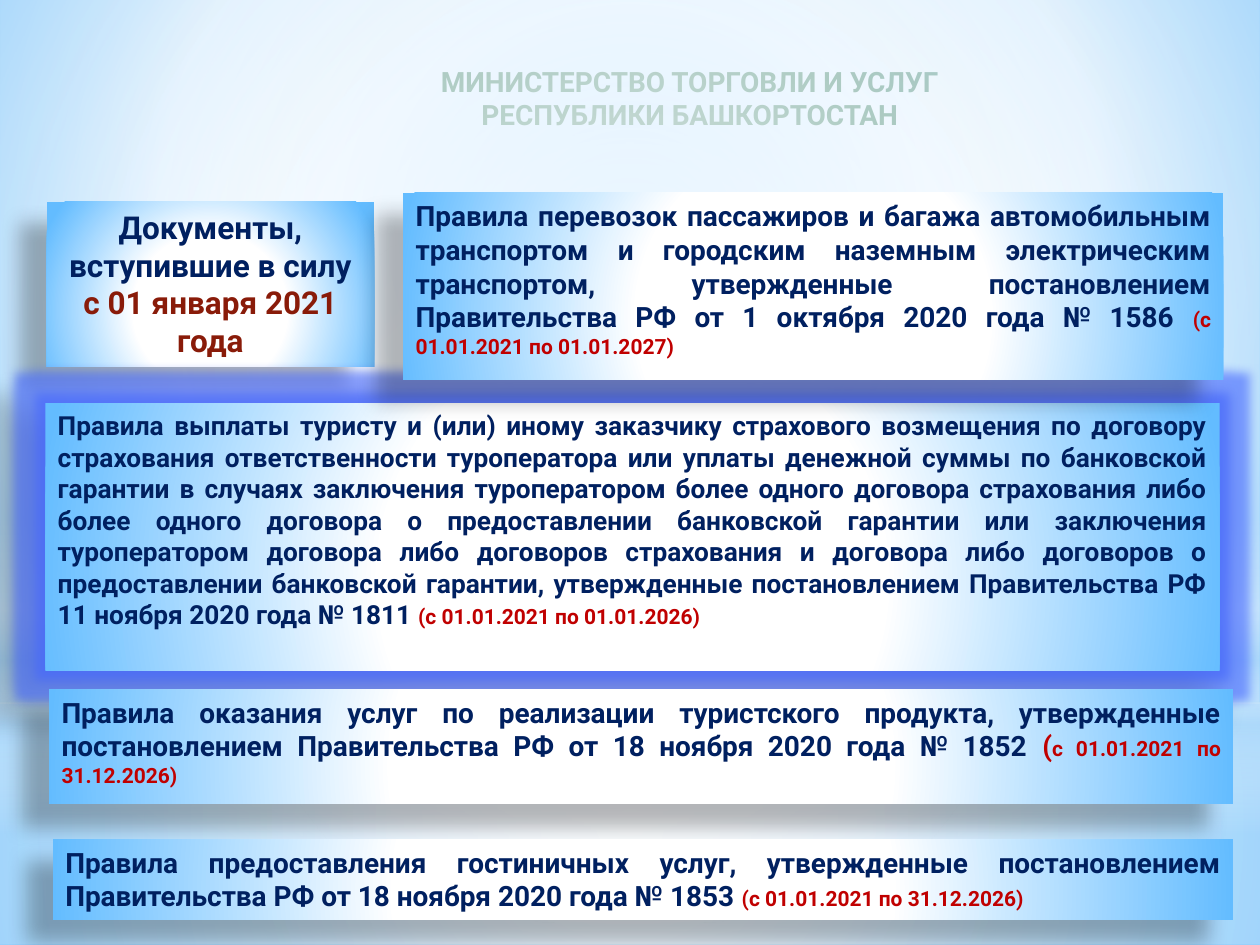
from dataclasses import dataclass
from typing import NamedTuple

from pptx import Presentation
from pptx import util as u
from pptx.dml.color import RGBColor
from pptx.enum import shapes, text
from pptx.oxml import parse_xml

NS = 'xmlns:a="http://schemas.openxmlformats.org/drawingml/2006/main"'


@dataclass(frozen=True)
class Theme:
    face: str = "Roboto"
    navy: str = "002060"
    red: str = "C00000"
    brown: str = "891B09"
    green: str = "23735D"
    glow: str = "4466FF"
    white: str = "FFFFFF"
    pale: str = "B4DCFA"
    sky: str = "63BCFF"
    large: int = 18
    head: int = 16
    dense: int = 15
    small: int = 12


T = Theme()


class Box(NamedTuple):
    left: float
    top: float
    width: float
    height: float


class Run(NamedTuple):
    words: str
    size: int
    color: str


class Grad(NamedTuple):
    """Stops are (position, colour, opacity); focus holds left, top, right, bottom insets."""
    stops: tuple
    focus: tuple = (50, 50, 50, 50)
    angle: int | None = None


class Panel(NamedTuple):
    box: Box
    grad: Grad
    kind: shapes.MSO_SHAPE = shapes.MSO_SHAPE.RECTANGLE


class Card(NamedTuple):
    box: Box
    runs: tuple
    align: text.PP_ALIGN = text.PP_ALIGN.JUSTIFY
    glow: bool = False


BACK = Grad(((0, "9ED5FF", 100), (60, T.white, 100), (100, "5BB9FF", 100)),
            (20, 10, 20, 60))
FACE = Grad(((0, T.white, 100), (42, T.white, 100), (100, T.sky, 100)),
            (24, 44, 24, 12))

PANELS = (
    Panel(Box(0, 5.58, 10, 1.92),
          Grad(((0, T.white, 91), (37, T.white, 76), (100, T.pale, 79)))),
    Panel(Box(0, 0, 10, 5.58),
          Grad(((0, T.white, 89), (48, T.white, 62), (100, T.pale, 79)))),
    Panel(Box(0, 4.12, 10, 2.5),
          Grad(((0, T.white, 0), (29, T.white, 30), (45, T.pale, 40),
                (55, T.white, 26), (65, T.pale, 60), (100, T.white, 0)), angle=90)),
    Panel(Box(0, 1.75, 10, 5.58),
          Grad(((0, T.white, 100), (56, T.white, 0))), shapes.MSO_SHAPE.OVAL),
)

CARDS = (
    Card(Box(0.37, 1.6, 2.6, 1.31),
         (Run("Документы, вступившие в силу ", T.large, T.navy),
          Run("с 01 января 2021 года", T.large, T.brown)), text.PP_ALIGN.CENTER),
    Card(Box(0.36, 3.2, 9.32, 2.12),
         (Run("Правила выплаты туристу и (или) иному заказчику страхового возмещения "
              "по договору страхования ответственности туроператора или уплаты "
              "денежной суммы по банковской гарантии в случаях заключения "
              "туроператором более одного договора страхования либо более одного "
              "договора о предоставлении банковской гарантии или заключения "
              "туроператором договора либо договоров страхования и договора либо "
              "договоров о предоставлении банковской гарантии, утвержденные "
              "постановлением Правительства РФ 11 ноября 2020 года № 1811 ",
              T.dense, T.navy),
          Run("(с 01.01.2021 по 01.01.2026)", T.small, T.red)), glow=True),
    Card(Box(0.39, 5.47, 9.4, 0.91),
         (Run("Правила оказания услуг по реализации туристского продукта, "
              "утвержденные постановлением Правительства РФ от 18 ноября 2020 года "
              "№ 1852 ", T.head, T.navy),
          Run("(", T.head, T.red),
          Run("с 01.01.2021 по 31.12.2026)", T.small, T.red))),
    Card(Box(0.42, 6.66, 9.37, 0.64),
         (Run("Правила предоставления гостиничных услуг, утвержденные "
              "постановлением Правительства РФ от 18 ноября 2020 года № 1853 ",
              T.head, T.navy),
          Run("(с 01.01.2021 по 31.12.2026)", T.small, T.red))),
    Card(Box(3.2, 1.53, 6.51, 1.48),
         (Run("Правила перевозок пассажиров и багажа автомобильным транспортом и "
              "городским наземным электрическим транспортом, утвержденные "
              "постановлением Правительства РФ от 1 октября 2020 года № 1586 ",
              T.head, T.navy),
          Run("(с 01.01.2021 по 01.01.2027)", T.small, T.red))),
)

TITLE = ("МИНИСТЕРСТВО ТОРГОВЛИ И УСЛУГ", "РЕСПУБЛИКИ БАШКОРТОСТАН")


def tint(color: str, alpha: int) -> str:
    return f'<a:srgbClr val="{color}"><a:alpha val="{alpha * 1000}"/></a:srgbClr>'


def blend(grad: Grad):
    """Make the gradient fill element."""
    stops = "".join(f'<a:gs pos="{pos * 1000}">{tint(color, alpha)}</a:gs>'
                    for pos, color, alpha in grad.stops)
    if grad.angle is None:
        sides = " ".join(f'{side}="{inset * 1000}"'
                         for side, inset in zip("ltrb", grad.focus))
        way = f'<a:path path="circle"><a:fillToRect {sides}/></a:path>'
    else:
        way = f'<a:lin ang="{grad.angle * 60000}" scaled="0"/>'
    return parse_xml(f'<a:gradFill {NS} rotWithShape="1"><a:gsLst>{stops}</a:gsLst>'
                     f'{way}</a:gradFill>')


def swap(props, grad: Grad) -> None:
    """Put the gradient where a solid fill stands."""
    old = props.find("{*}solidFill")
    props.replace(old, blend(grad))


def draw_panel(slide, panel: Panel):
    shape = slide.shapes.add_shape(panel.kind, *map(u.Inches, panel.box))
    shape.shadow.inherit = False
    shape.line.fill.background()
    shape.fill.solid()
    swap(shape._element.spPr, panel.grad)
    return shape


def set_frame(frame) -> None:
    form = {"word_wrap": True, "auto_size": text.MSO_AUTO_SIZE.NONE,
            "vertical_anchor": text.MSO_ANCHOR.TOP}
    for key, val in form.items():
        setattr(frame, key, val)


def write(para, runs: tuple, align: text.PP_ALIGN) -> None:
    para.alignment = align
    for item in runs:
        run = para.add_run()
        run.text = item.words
        form = {"name": T.face, "size": u.Pt(item.size), "bold": True}
        for key, val in form.items():
            setattr(run.font, key, val)
        run.font.color.rgb = RGBColor.from_string(item.color)


def draw_card(slide, card: Card) -> None:
    shape = draw_panel(slide, Panel(card.box, FACE))
    glow = f'<a:glow rad="{u.Pt(12)}">{tint(T.glow, 60)}</a:glow>' if card.glow else ""
    props = shape._element.spPr
    props.replace(props.find("{*}effectLst"), parse_xml(
        f'<a:effectLst {NS}>{glow}<a:outerShdw blurRad="{u.Pt(11.8)}" '
        f'dist="{u.Pt(19.7)}" dir="{141 * 60000}" algn="ctr" rotWithShape="0">'
        f'{tint("000000", 28)}</a:outerShdw></a:effectLst>'))
    set_frame(shape.text_frame)
    write(shape.text_frame.paragraphs[0], card.runs, card.align)


def draw_title(slide, box: Box) -> None:
    title = slide.shapes.title
    for key, val in zip(Box._fields, box):
        setattr(title, key, u.Inches(val))
    frame = title.text_frame
    set_frame(frame)
    for row, words in enumerate(TITLE):
        para = frame.add_paragraph() if row else frame.paragraphs[0]
        write(para, (Run(words, T.head, T.green),), text.PP_ALIGN.CENTER)


def main() -> None:
    deck = Presentation()
    deck.slide_width, deck.slide_height = u.Inches(10), u.Inches(7.5)
    slide = deck.slides.add_slide(deck.slide_layouts[5])
    slide.background.fill.solid()
    swap(slide._element.find(".//{*}bgPr"), BACK)
    for panel in PANELS:
        draw_panel(slide, panel)
    for card in CARDS:
        draw_card(slide, card)
    draw_title(slide, Box(2.72, 0.46, 5.51, 0.64))
    deck.save("out.pptx")


if __name__ == "__main__":
    main()
